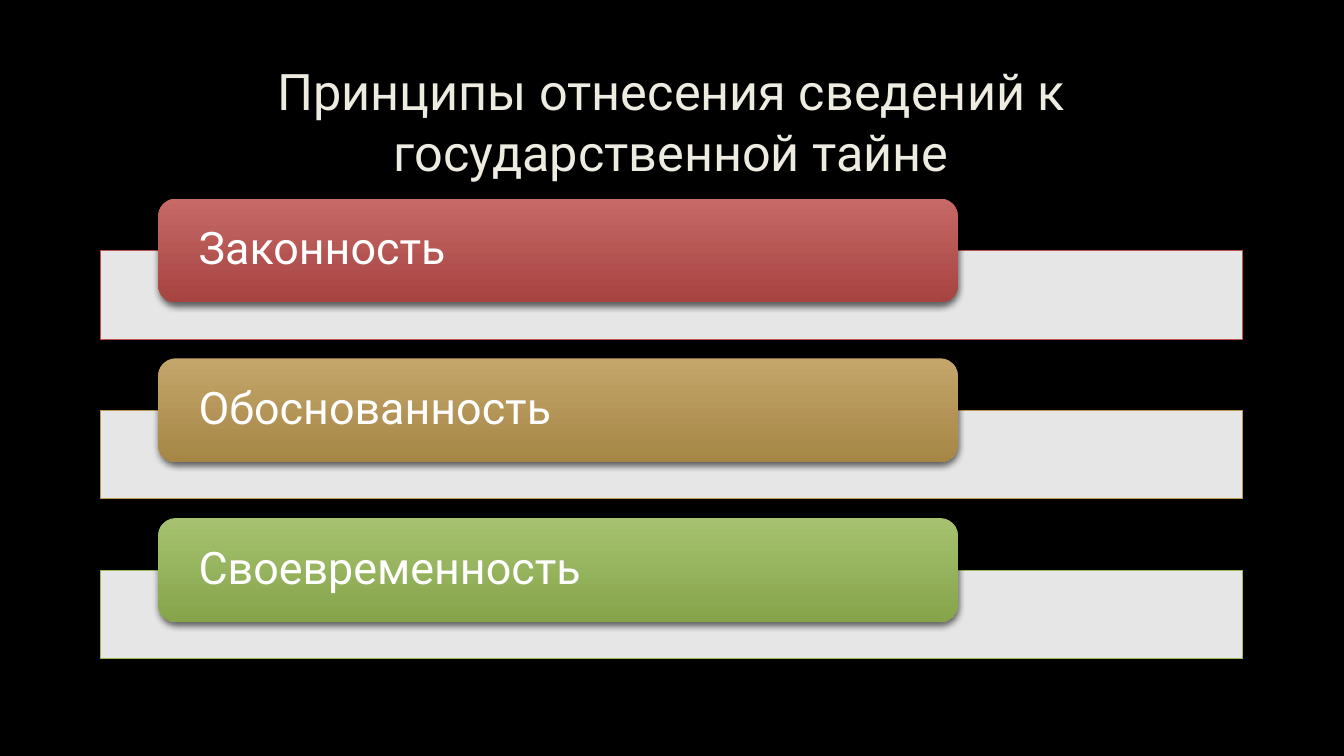
from lxml import etree
from pptx import Presentation
from pptx.dml.color import RGBColor
from pptx.enum.shapes import MSO_SHAPE
from pptx.enum.text import MSO_ANCHOR, MSO_AUTO_SIZE, PP_ALIGN
from pptx.oxml import parse_xml
from pptx.oxml.ns import nsdecls, qn
from pptx.util import Inches, Pt

# Content
HEADING = "Принципы отнесения сведений к государственной тайне"
BLACK = RGBColor(0x00, 0x00, 0x00)
WHITE = RGBColor(0xFF, 0xFF, 0xFF)
CREAM = RGBColor(0xEE, 0xEC, 0xE1)
# Principle, band outline, gradient top, gradient bottom
PRINCIPLES = [
    ("Законность", RGBColor(0xC0, 0x50, 0x4D),
     RGBColor(0xC6, 0x69, 0x67), RGBColor(0xA6, 0x44, 0x41)),
    ("Обоснованность", RGBColor(0xBD, 0x9B, 0x53),
     RGBColor(0xC4, 0xA6, 0x6B), RGBColor(0xA5, 0x86, 0x45)),
    ("Своевременность", RGBColor(0x9B, 0xBB, 0x59),
     RGBColor(0xA6, 0xC2, 0x70), RGBColor(0x86, 0xA4, 0x4A)),
]
FONT = "Roboto"

# Layout, in inches
LEFT, WIDTH = 1, 11.32
LABEL_LEFT, LABEL_WIDTH, LABEL_HEIGHT = 1.57, 7.93, 1.03
FIRST_LABEL_TOP, PITCH = 1.97, 1.585
BAND_DROP, BAND_HEIGHT = 0.515, 0.88


def style_text(paragraph, size, color):
    font = paragraph.runs[0].font
    font.name, font.size = FONT, Pt(size)
    font.color.rgb = color


def add_band(slide, top, outline):
    band = slide.shapes.add_shape(MSO_SHAPE.RECTANGLE, Inches(LEFT), Inches(top),
                                  Inches(WIDTH), Inches(BAND_HEIGHT))
    band.shadow.inherit = False
    band.fill.solid()
    band.fill.fore_color.rgb = WHITE
    color = band.fill._xPr.find(qn("a:solidFill"))[0]
    etree.SubElement(color, qn("a:alpha"), val="90000")
    band.line.color.rgb = outline
    band.line.width = Pt(0.75)


def add_label(slide, top, principle, gradient):
    label = slide.shapes.add_shape(MSO_SHAPE.ROUNDED_RECTANGLE, Inches(LABEL_LEFT),
                                   Inches(top), Inches(LABEL_WIDTH), Inches(LABEL_HEIGHT))
    label.line.fill.background()
    label.fill.gradient()
    label.fill.gradient_angle = 270
    for position, (stop, color) in enumerate(zip(label.fill.gradient_stops, gradient)):
        stop.position = position
        stop.color.rgb = color

    # Soft shadow below the label
    label.shadow.inherit = False
    label._element.spPr.find(qn("a:effectLst")).append(parse_xml(
        f'<a:outerShdw {nsdecls("a")} blurRad="{Pt(5)}" dist="{Pt(2)}" dir="5400000" '
        'rotWithShape="0"><a:srgbClr val="000000"><a:alpha val="60000"/></a:srgbClr>'
        '</a:outerShdw>'))

    frame = label.text_frame
    frame.text = principle
    frame.word_wrap = True
    frame.vertical_anchor = MSO_ANCHOR.MIDDLE
    frame.margin_left = frame.margin_right = Inches(0.35)
    frame.margin_top = frame.margin_bottom = Inches(0.05)
    paragraph = frame.paragraphs[0]
    paragraph.alignment = PP_ALIGN.LEFT
    paragraph.line_spacing = 0.9
    style_text(paragraph, 32, WHITE)


def add_heading(slide):
    heading = slide.shapes.title
    heading.left, heading.top = Inches(LEFT), Inches(0.67)
    heading.width, heading.height = Inches(WIDTH), Inches(1.06)
    frame = heading.text_frame
    frame.text = HEADING
    frame.word_wrap = True
    frame.auto_size = MSO_AUTO_SIZE.NONE
    frame.vertical_anchor = MSO_ANCHOR.MIDDLE
    paragraph = frame.paragraphs[0]
    paragraph.alignment = PP_ALIGN.CENTER
    style_text(paragraph, 36, CREAM)

    # Faint outline around the letters
    paragraph.runs[0].font._element.insert(0, parse_xml(
        f'<a:ln {nsdecls("a")} w="{Pt(0.75)}"><a:solidFill><a:srgbClr val="404040">'
        '<a:alpha val="10000"/></a:srgbClr></a:solidFill></a:ln>'))


def main():
    presentation = Presentation()
    presentation.slide_width, presentation.slide_height = Inches(13.33), Inches(7.5)
    slide = presentation.slides.add_slide(presentation.slide_layouts[5])
    slide.background.fill.solid()
    slide.background.fill.fore_color.rgb = BLACK

    add_heading(slide)
    for row, (principle, outline, *gradient) in enumerate(PRINCIPLES):
        top = FIRST_LABEL_TOP + row * PITCH
        add_band(slide, top + BAND_DROP, outline)
        add_label(slide, top, principle, gradient)

    presentation.save("out.pptx")


if __name__ == "__main__":
    main()
